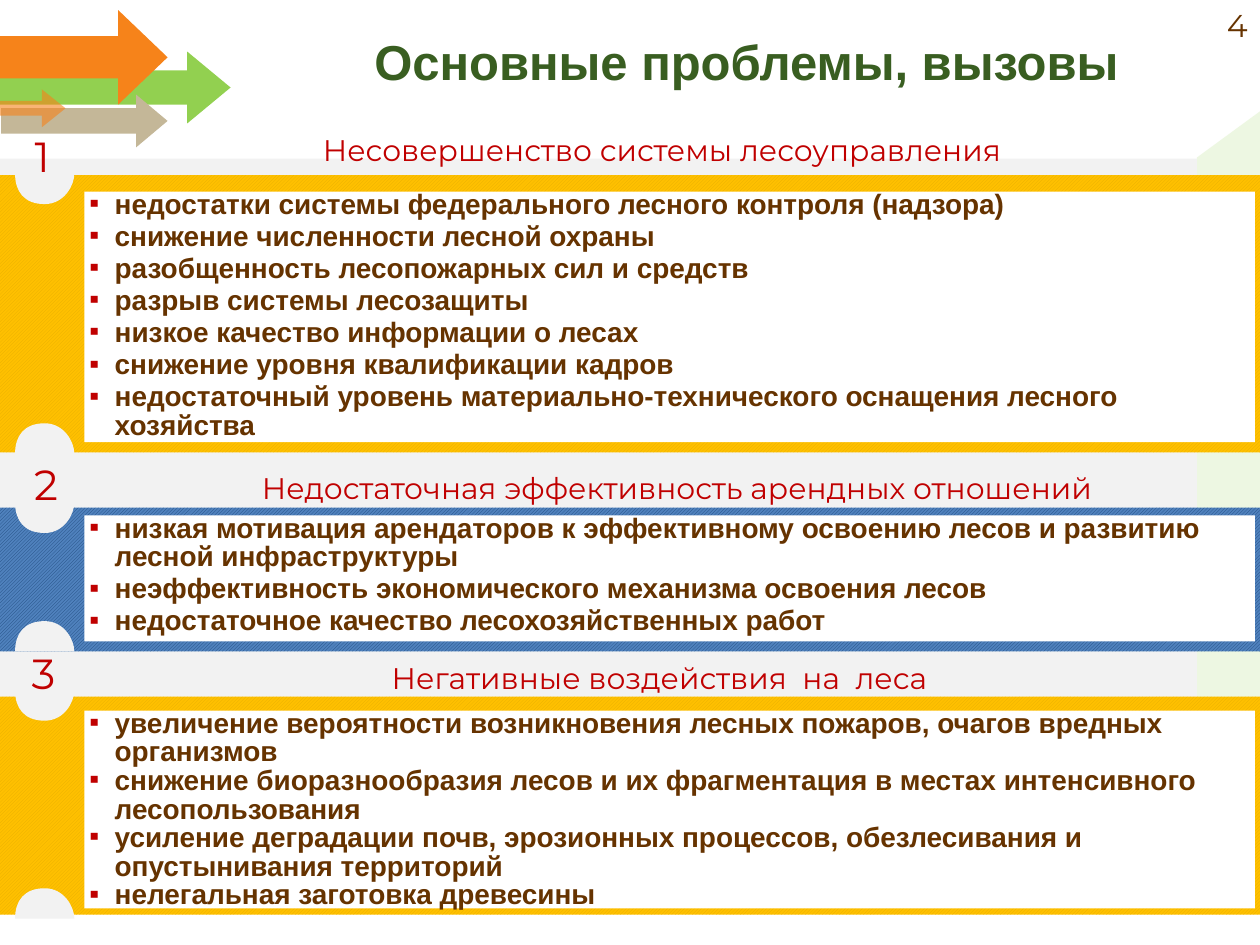
from dataclasses import dataclass

from lxml import etree
from pptx import Presentation
from pptx.dml.color import RGBColor
from pptx.enum import dml, shapes, text
from pptx.oxml import ns
from pptx.util import Inches, Pt


@dataclass(frozen=True)
class Theme:
    green: str = "92D050"
    orange: str = "F6831A"
    tan: str = "C4B798"
    gray: str = "F2F2F2"
    white: str = "FFFFFF"
    title: str = "395E21"
    body: str = "663300"
    accent: str = "C00000"
    amber: tuple = ("E6AF00", "FFC000")
    blue: tuple = ("1F497D", "4F81BD")
    body_font: str = "Arial"
    heading_font: str = "Montserrat"
    title_size: int = 28
    number_size: int = 24
    page_size: int = 18
    heading_size: int = 17
    body_size: int = 16


@dataclass(frozen=True)
class Section:
    number: str
    heading: str
    items: tuple
    colors: tuple
    band: tuple
    panel: tuple
    heading_box: tuple
    number_box: tuple
    notches: tuple
    space_after: int = 2
    heading_margins: tuple = (0.1, 0.1)


THEME = Theme()

SECTIONS = (
    Section(
        "1", "Несовершенство системы лесоуправления",
        ("недостатки системы федерального лесного контроля (надзора)",
         "снижение численности лесной охраны",
         "разобщенность лесопожарных сил и средств",
         "разрыв системы лесозащиты",
         "низкое качество информации о лесах",
         "снижение уровня квалификации кадров",
         "недостаточный уровень материально-технического оснащения лесного хозяйства"),
        THEME.amber, (0, 1.39, 10, 2.2), (0.67, 1.52, 9.29, 1.99),
        (0.51, 1, 9.49, 0.39), (0.12, 0.99, 0.43, 0.5), (1.38, 3.36)),
    Section(
        "2", "Недостаточная эффективность арендных отношений",
        ("низкая мотивация арендаторов к эффективному освоению лесов и развитию лесной инфраструктуры",
         "неэффективность экономического механизма освоения лесов",
         "недостаточное качество лесохозяйственных работ"),
        THEME.blue, (0, 4.03, 10, 1.14), (0.67, 4.09, 9.29, 1),
        (0.83, 3.68, 9.09, 0.39), (0.13, 3.59, 0.47, 0.5), (3.99, 4.93)),
    Section(
        "3", "Негативные воздействия  на  леса",
        ("увеличение вероятности возникновения лесных пожаров, очагов вредных организмов",
         "снижение биоразнообразия лесов и их фрагментация в местах интенсивного лесопользования",
         "усиление деградации почв, эрозионных процессов, обезлесивания и опустынивания территорий",
         "нелегальная заготовка древесины"),
        THEME.amber, (0, 5.53, 10, 1.73), (0.67, 5.64, 9.29, 1.57),
        (0.43, 5.19, 9.57, 0.39), (0.13, 5.09, 0.43, 0.5), (5.48, 7.05),
        space_after=0, heading_margins=(0.04, 0)),
)


def inches(box):
    return [Inches(value) for value in box]


def paint(shape, color, opacity=100):
    shape.shadow.inherit = False
    shape.line.fill.background()
    shape.fill.solid()
    shape.fill.fore_color.rgb = RGBColor.from_string(color)
    if opacity < 100:
        color_element = shape.fill._xPr.find(".//" + ns.qn("a:srgbClr"))
        etree.SubElement(color_element, ns.qn("a:alpha"), val=str(opacity * 1000))


def style(paragraph, font, size, color, bold=False):
    paragraph.font.name = font
    paragraph.font.size = Pt(size)
    paragraph.font.bold = bold
    paragraph.font.color.rgb = RGBColor.from_string(color)


def add_rectangle(slide, box, color):
    shape = slide.shapes.add_shape(shapes.MSO_SHAPE.RECTANGLE, *inches(box))
    paint(shape, color)
    return shape


def add_outline(slide, points, color, opacity=100):
    builder = slide.shapes.build_freeform(*inches(points[0]))
    builder.add_line_segments([inches(point) for point in points[1:]], close=True)
    shape = builder.convert_to_shape()
    paint(shape, color, opacity)
    return shape


def add_label(slide, box, words, size, color, alignment, margins=(0.1, 0.1), wrap=True):
    frame = slide.shapes.add_textbox(*inches(box)).text_frame
    frame.word_wrap = wrap
    frame.margin_left, frame.margin_right = inches(margins)
    paragraph = frame.paragraphs[0]
    paragraph.text = words
    paragraph.alignment = alignment
    style(paragraph, THEME.heading_font, size, color)


def add_background(slide):
    add_outline(slide, [(9.5, 1.25), (10.06, 0.84), (10.03, 6.65), (9.5, 7.07)],
                THEME.green, 16)
    add_rectangle(slide, (0, 1.26, 9.5, 5.81), THEME.gray)


def add_arrows(slide):
    arrows = (
        ((0.63, -0.22, 0.57, 1.83), (0.479, 0.604), THEME.green, 100),
        ((0.29, -0.21, 0.75, 1.33), (0.447, 0.523), THEME.orange, 100),
        ((0.46, 0.3, 0.42, 1.32), (0.479, 0.597), THEME.tan, 100),
        ((0.11, 0.6, 0.3, 0.52), (0.389, 0.625), THEME.orange, 60),
    )
    for box, (shaft, head), color, opacity in arrows:
        arrow = slide.shapes.add_shape(shapes.MSO_SHAPE.UP_ARROW, *inches(box))
        arrow.rotation = 90
        arrow.adjustments[0] = shaft
        arrow.adjustments[1] = head
        paint(arrow, color, opacity)


def add_notch(slide, box, pointing_down):
    left, top, width, height = box
    flat, tip = (0, height) if pointing_down else (height, 0)
    shoulder = flat + (tip - flat) * 0.38
    low_shoulder = flat + (tip - flat) * 0.58
    middle = width / 2
    curves = (
        ((width * 0.25, flat), (width * 0.66, flat), (width, flat)),
        ((width, shoulder), (width * 0.83, tip), (middle, tip)),
        ((width * 0.15, tip), (0, low_shoulder), (0, flat)),
    )
    corners = [(0, flat), (width, flat), (middle, tip)]
    shape = add_outline(slide, [(left + x, top + y) for x, y in corners], THEME.gray)
    outline = shape._element.find(".//" + ns.qn("a:path"))
    for line in outline.findall(ns.qn("a:lnTo")):
        outline.remove(line)
    close = outline.find(ns.qn("a:close"))
    for points in curves:
        bezier = etree.Element(ns.qn("a:cubicBezTo"))
        for x, y in points:
            etree.SubElement(bezier, ns.qn("a:pt"), x=str(Inches(x)), y=str(Inches(y)))
        close.addprevious(bezier)


def add_bullet(paragraph):
    properties = paragraph._p.get_or_add_pPr()
    properties.set("marL", str(Inches(0.2)))
    properties.set("indent", str(-Inches(0.2)))
    bullet_color = etree.SubElement(properties, ns.qn("a:buClr"))
    etree.SubElement(bullet_color, ns.qn("a:srgbClr"), val=THEME.accent)
    etree.SubElement(properties, ns.qn("a:buFont"), typeface=THEME.body_font)
    etree.SubElement(properties, ns.qn("a:buChar"), char="▪")


def add_panel(slide, box, items, space_after):
    frame = add_rectangle(slide, box, THEME.white).text_frame
    frame.word_wrap = True
    frame.vertical_anchor = text.MSO_ANCHOR.TOP
    frame.margin_left = frame.margin_right = Inches(0.04)
    frame.margin_top, frame.margin_bottom = Inches(0), Inches(0.05)
    for index, item in enumerate(items):
        paragraph = frame.add_paragraph() if index else frame.paragraphs[0]
        paragraph.text = item
        add_bullet(paragraph)
        paragraph.alignment = text.PP_ALIGN.LEFT
        paragraph.line_spacing = 0.85
        paragraph.space_after = Pt(space_after)
        style(paragraph, THEME.body_font, THEME.body_size, THEME.body, True)


def add_section(slide, section):
    band = add_rectangle(slide, section.band, THEME.white)
    band.fill.patterned()
    band.fill.pattern = dml.MSO_PATTERN.LIGHT_UPWARD_DIAGONAL
    band.fill.fore_color.rgb = RGBColor.from_string(section.colors[0])
    band.fill.back_color.rgb = RGBColor.from_string(section.colors[1])
    for top, pointing_down in zip(section.notches, (True, False)):
        add_notch(slide, (0.12, top, 0.47, 0.24), pointing_down)
    add_panel(slide, section.panel, section.items, section.space_after)
    center = text.PP_ALIGN.CENTER
    add_label(slide, section.heading_box, section.heading, THEME.heading_size,
              THEME.accent, center, section.heading_margins)
    add_label(slide, section.number_box, section.number, THEME.number_size,
              THEME.accent, center, wrap=False)


def set_title(slide, box, words):
    title = slide.shapes.title
    title.left, title.top, title.width, title.height = inches(box)
    frame = title.text_frame
    frame.auto_size = text.MSO_AUTO_SIZE.NONE
    frame.vertical_anchor = text.MSO_ANCHOR.MIDDLE
    paragraph = frame.paragraphs[0]
    paragraph.text = words
    paragraph.alignment = text.PP_ALIGN.CENTER
    paragraph.line_spacing = 0.9
    style(paragraph, THEME.body_font, THEME.title_size, THEME.title, True)


def main():
    presentation = Presentation()
    presentation.slide_width, presentation.slide_height = Inches(10), Inches(7.5)
    slide = presentation.slides.add_slide(presentation.slide_layouts[5])
    add_background(slide)
    add_arrows(slide)
    set_title(slide, (1.85, 0.16, 8.15, 0.7), "Основные проблемы, вызовы")
    add_label(slide, (7.67, 0, 2.33, 0.33), "4", THEME.page_size, THEME.body,
              text.PP_ALIGN.RIGHT)
    for section in SECTIONS:
        add_section(slide, section)
    presentation.save("out.pptx")


if __name__ == "__main__":
    main()
